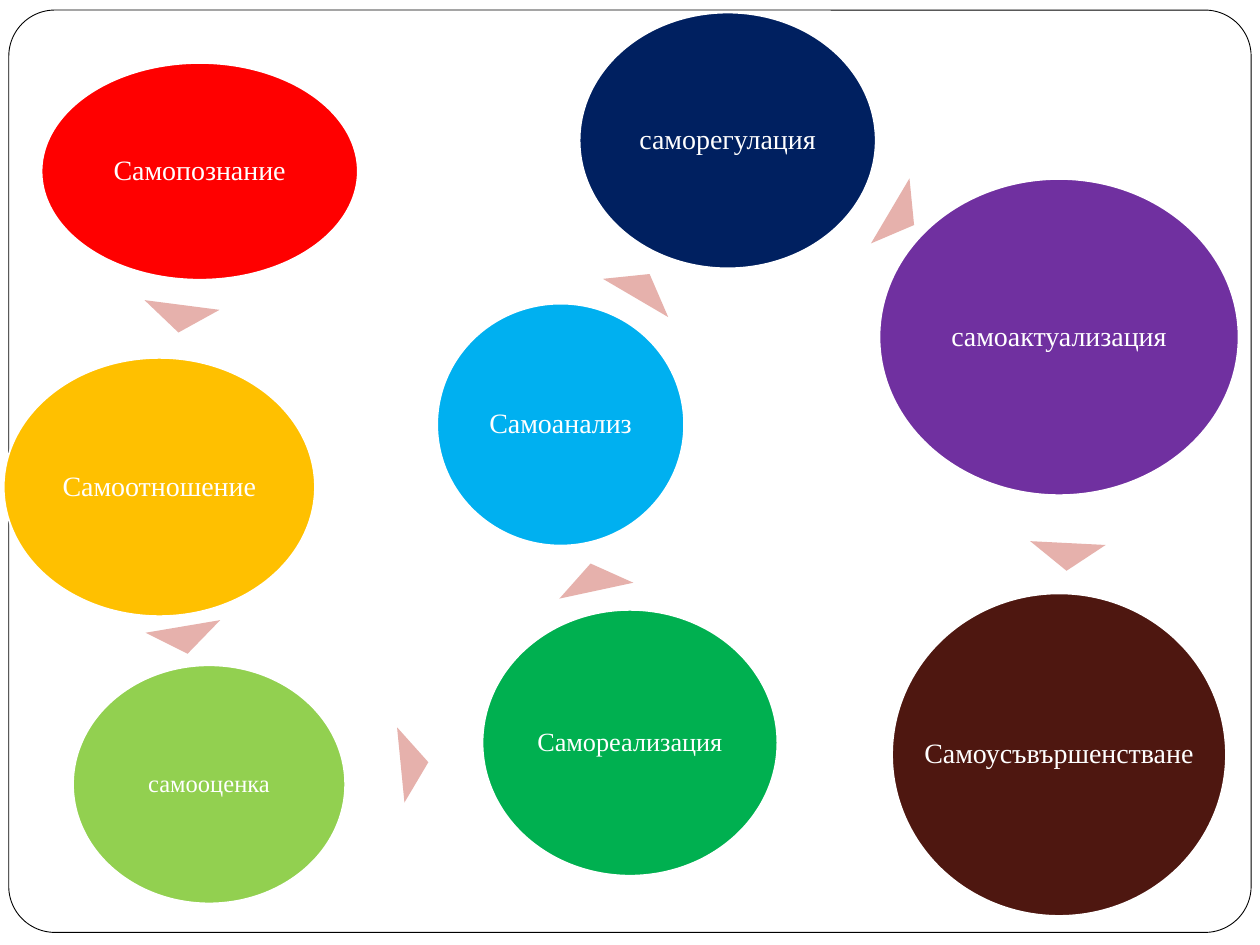
from dataclasses import dataclass

from pptx import Presentation
from pptx import util as u
from pptx.dml.color import RGBColor
from pptx.enum import shapes, text


@dataclass(frozen=True)
class Theme:
    paper: str = "FFFFFF"
    ink: str = "000000"
    marker: str = "E6B1AC"
    font: str = "Times New Roman"
    label: int = 16
    label_medium: int = 15
    label_small: int = 14
    red: str = "FF0000"
    amber: str = "FFC000"
    lime: str = "92D050"
    green: str = "00B050"
    sky: str = "00B0F0"
    navy: str = "002060"
    purple: str = "7030A0"
    brown: str = "4E1710"


theme = Theme()

# Label, size, colour, and left, top, width, height of each stage
stages = [
    ("Самопознание", theme.label, theme.red, (0.33, 0.5, 2.51, 1.72)),
    ("Самоотношение", theme.label, theme.amber, (0.03, 2.84, 2.47, 2.05)),
    ("самооценка", theme.label_small, theme.lime, (0.58, 5.28, 2.16, 1.89)),
    ("Самореализация", theme.label_medium, theme.green, (3.83, 4.84, 2.34, 2.11)),
    ("Самоанализ", theme.label, theme.sky, (3.47, 2.41, 1.96, 1.92)),
    ("саморегулация", theme.label, theme.navy, (4.6, 0.1, 2.35, 2.03)),
    ("самоактуализация", theme.label, theme.purple, (6.98, 1.42, 2.85, 2.51)),
    ("Самоусъвършенстване", theme.label, theme.brown, (7.08, 4.71, 2.65, 2.56)),
]

# Left, top and rotation of the marker that leads to each following stage
markers = [
    (1.13, 2.42, 187.4),
    (1.17, 4.97, 170.4),
    (2.99, 5.95, 84.4),
    (4.41, 4.47, 347.9),
    (4.8, 2.16, 30.4),
    (6.86, 1.62, 120.6),
    (8.17, 4.31, 182.9),
]
MARKER_SIZE = (0.6, 0.22)

prs = Presentation()
prs.slide_width = u.Inches(10)
prs.slide_height = u.Inches(7.5)
slide = prs.slides.add_slide(prs.slide_layouts[6])


def add_preset(kind, box, fill, line=None, line_width=1):
    """Add a flat shape; without a line colour it has no outline."""
    shape = slide.shapes.add_shape(kind, *(u.Inches(length) for length in box))
    shape.shadow.inherit = False
    shape.fill.solid()
    shape.fill.fore_color.rgb = RGBColor.from_string(fill)
    if line:
        shape.line.color.rgb = RGBColor.from_string(line)
        shape.line.width = u.Pt(line_width)
    else:
        shape.line.fill.background()
    return shape


frame = add_preset(shapes.MSO_SHAPE.ROUNDED_RECTANGLE, (0.07, 0.08, 9.86, 7.32),
                   theme.paper, theme.ink, 0.5)
frame.adjustments[0] = 0.05

for index, (label, size, colour, box) in enumerate(stages):
    if index:
        left, top, angle = markers[index - 1]
        marker = add_preset(shapes.MSO_SHAPE.ISOSCELES_TRIANGLE,
                            (left, top, *MARKER_SIZE), theme.marker)
        marker.rotation = angle

    stage = add_preset(shapes.MSO_SHAPE.OVAL, box, colour, theme.paper)
    body = stage.text_frame
    body.word_wrap = False
    body.vertical_anchor = text.MSO_ANCHOR.MIDDLE
    body.margin_left = body.margin_right = u.Inches(0.02)
    body.margin_top = body.margin_bottom = u.Inches(0.02)
    paragraph = body.paragraphs[0]
    paragraph.alignment = text.PP_ALIGN.CENTER
    paragraph.line_spacing = 0.9
    run = paragraph.add_run()
    run.text = label
    run.font.name = theme.font
    run.font.size = u.Pt(size)
    run.font.color.rgb = RGBColor.from_string(theme.paper)

prs.save("out.pptx")
